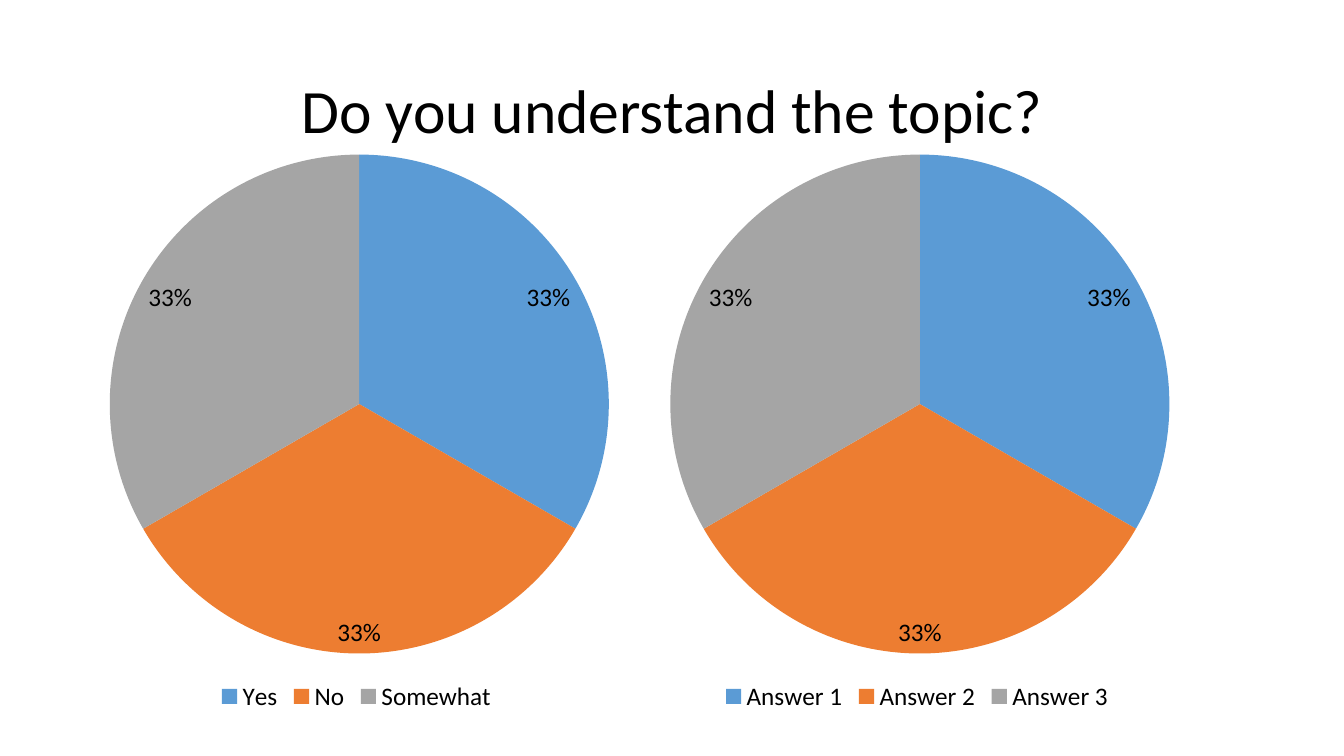
from lxml import etree
from pptx import Presentation
from pptx.chart.data import CategoryChartData
from pptx.dml.color import RGBColor
from pptx.enum.chart import XL_CHART_TYPE, XL_LABEL_POSITION, XL_LEGEND_POSITION
from pptx.enum.text import MSO_ANCHOR, PP_ALIGN
from pptx.oxml.ns import qn
from pptx.util import Inches, Pt

TITLE = "Do you understand the topic?"
SHARES = [0.33, 0.33, 0.33]
POLLS = [
    (6.25, ["Answer 1", "Answer 2", "Answer 3"]),
    (0.69, ["Yes", "No", "Somewhat"]),
]

FONT = "Calibri"
BLACK = RGBColor(0x00, 0x00, 0x00)
SLICE_COLORS = [
    RGBColor(0x5B, 0x9B, 0xD5),
    RGBColor(0xED, 0x7D, 0x31),
    RGBColor(0xA5, 0xA5, 0xA5),
]
CHART_TOP = 1.42
CHART_SIZE = 5.69
PIE_FRAME = {"x": 0.07, "y": 0.02, "w": 0.87, "h": 0.87}


def style_font(font, size):
    font.name = FONT
    font.size = Pt(size)
    font.color.rgb = BLACK


def place_pie(chart):
    """Fix the pie inside the chart, as fractions of the chart size."""
    plot_area = chart.plots[0]._element.getparent()
    for old_layout in plot_area.findall(qn("c:layout")):
        plot_area.remove(old_layout)
    layout = etree.Element(qn("c:layout"))
    manual = etree.SubElement(layout, qn("c:manualLayout"))
    settings = {"layoutTarget": "inner", "xMode": "edge", "yMode": "edge", **PIE_FRAME}
    for name, value in settings.items():
        etree.SubElement(manual, qn(f"c:{name}")).set("val", str(value))
    plot_area.insert(0, layout)


def add_poll(slide, left, answers):
    data = CategoryChartData()
    data.categories = answers
    data.add_series("Series 1", SHARES)
    chart = slide.shapes.add_chart(
        XL_CHART_TYPE.PIE, Inches(left), Inches(CHART_TOP),
        Inches(CHART_SIZE), Inches(CHART_SIZE), data,
    ).chart
    style_font(chart.font, 18)
    chart.has_title = False
    chart.has_legend = True
    chart.legend.position = XL_LEGEND_POSITION.BOTTOM
    chart.legend.include_in_layout = False
    style_font(chart.legend.font, 18)

    plot = chart.plots[0]
    plot.vary_by_categories = True
    for index, color in enumerate(SLICE_COLORS):
        fill = plot.series[0].points[index].format.fill
        fill.solid()
        fill.fore_color.rgb = color

    labels = plot.series[0].data_labels
    labels.show_value = True
    labels.number_format = "0%"
    labels.number_format_is_linked = False
    labels.position = XL_LABEL_POSITION.INSIDE_END
    style_font(labels.font, 18)
    place_pie(chart)


def add_title(slide):
    title = slide.shapes.title
    title.left, title.top = Inches(0.92), Inches(0.4)
    title.width, title.height = Inches(11.5), Inches(1.45)
    title.text_frame.vertical_anchor = MSO_ANCHOR.MIDDLE
    paragraph = title.text_frame.paragraphs[0]
    paragraph.alignment = PP_ALIGN.CENTER
    paragraph.line_spacing = 0.9
    run = paragraph.add_run()
    run.text = TITLE
    style_font(run.font, 44)
    # The title lies in front of the charts.
    slide.shapes._spTree.append(title._element)


def main():
    presentation = Presentation()
    presentation.slide_width = Inches(13.33)
    presentation.slide_height = Inches(7.5)
    slide = presentation.slides.add_slide(presentation.slide_layouts[5])
    for left, answers in POLLS:
        add_poll(slide, left, answers)
    add_title(slide)
    presentation.save("out.pptx")


if __name__ == "__main__":
    main()
